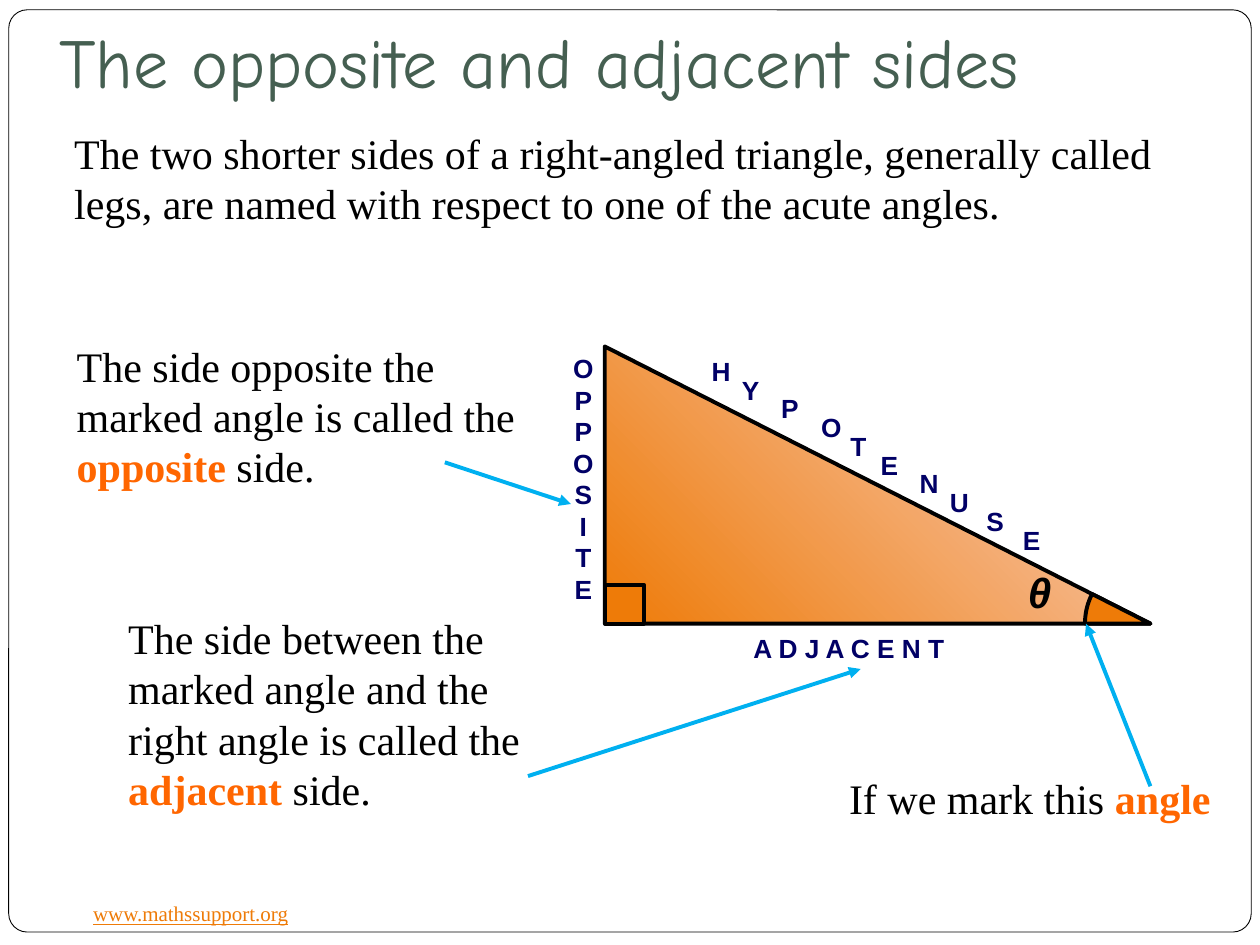
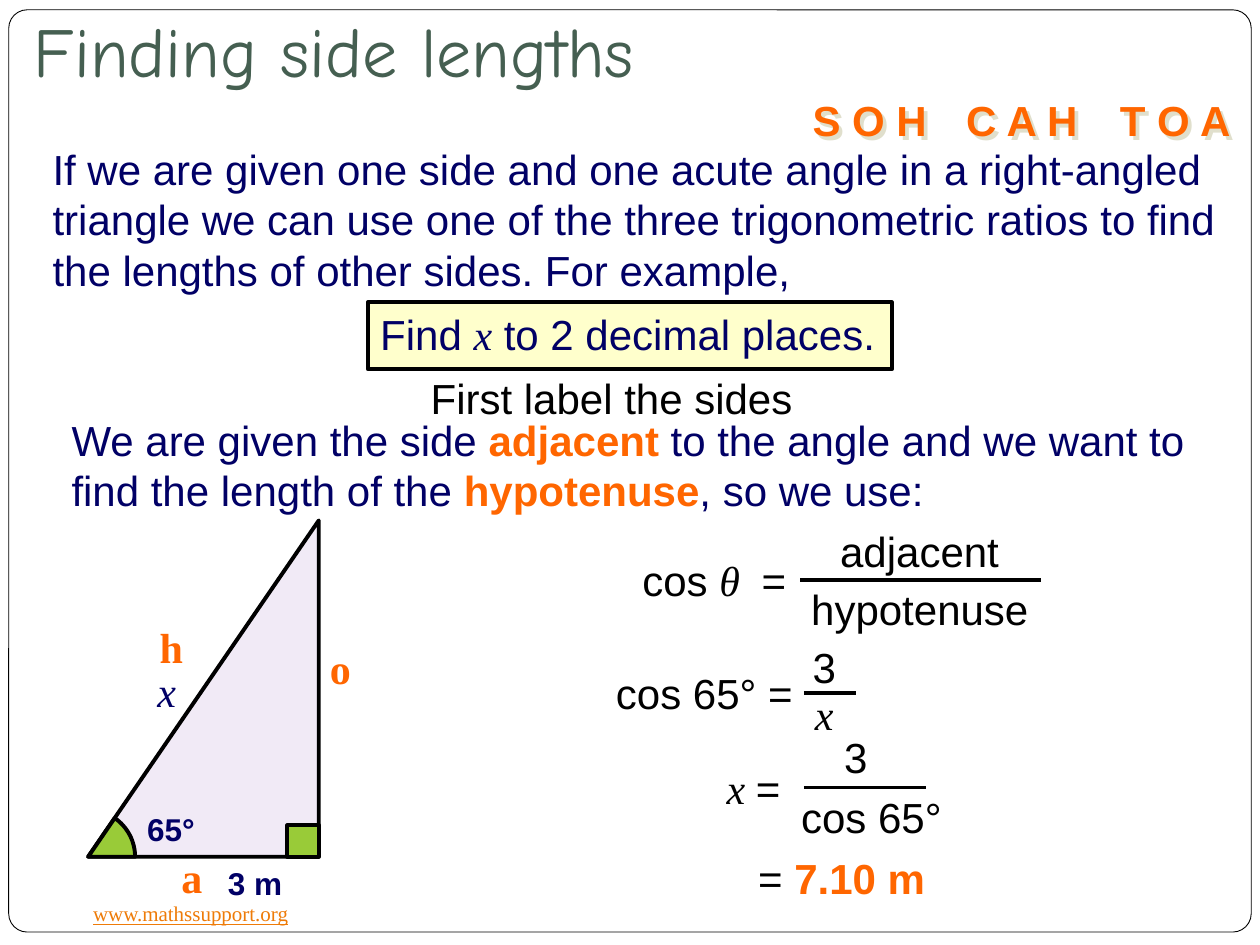
from math import atan2, cos, pi, sin

from lxml import etree
from pptx import Presentation
from pptx.dml.color import RGBColor
from pptx.enum.shapes import MSO_CONNECTOR, MSO_SHAPE
from pptx.enum.text import MSO_ANCHOR, MSO_AUTO_SIZE, PP_ALIGN
from pptx.oxml.ns import qn
from pptx.util import Pt

# Shared look
WHITE, BLACK, NAVY, ORANGE = "FFFFFF", "000000", "010066", "FF6600"
SKY, AMBER, GREEN, LILAC, CREAM = "00B0F0", "EE7B08", "99CB38", "F1EAF6", "FFFFCC"
LINE_WIDTH = 2.25
LINE_HEIGHT = 1.2
INSET_X, INSET_Y = 7.2, 3.6


def font(name, color, size=24, **more):
    return dict(name=name, color=color, size=size, **more)


SERIF, SANS = "Times New Roman", "Arial"
TITLE = font("Comic Neue", "455F51", 40)
LINK = font(SERIF, AMBER, 12, underline=True)
SERIF_TEXT = font(SERIF, BLACK)
SERIF_KEY = font(SERIF, ORANGE, bold=True)
SANS_TEXT = font(SANS, BLACK)
SANS_NAVY = font(SANS, NAVY)
SANS_KEY = font(SANS, ORANGE, bold=True)
VARIABLE = font(SERIF, BLACK, italic=True)
VARIABLE_NAVY = font(SERIF, NAVY, italic=True)
THETA = font(SANS, BLACK, bold=True, italic=True)
SIDE_NAME = font(SANS, NAVY, 15, bold=True)
MEASURE = font(SANS, NAVY, 18, bold=True)

# Slide 1 content: left, top, width, lines, runs
SIDES_TITLE = ("The opposite and adjacent sides", (26.6, 10.8, 674.6, 54.7))
SIDES_PARAGRAPHS = [
    (35.3, 69.1, 661, 2, [("The two shorter sides of a right-angled triangle, generally called "
                           "legs, are named with respect to one of the acute angles.", SERIF_TEXT)]),
    (36.7, 190.8, 265.7, 3, [("The side opposite the marked angle is called the ", SERIF_TEXT),
                             ("opposite", SERIF_KEY), (" side.", SERIF_TEXT)]),
    (66.2, 346.3, 257.8, 4, [("The side between the marked angle and the right angle is called the ",
                              SERIF_TEXT), ("adjacent", SERIF_KEY), (" side.", SERIF_TEXT)]),
    (478.1, 437.8, 241.9, 1, [("If we mark this ", SERIF_TEXT), ("angle", SERIF_KEY)]),
]
SIDES_TRIANGLE = (345.6, 198, 311.8, 158.4)
HYPOTENUSE_LEFTS = [399.6, 416.9, 439.2, 462.2, 478.8, 496.1, 518.4, 535.7, 556.6, 577.4]
HYPOTENUSE_TOP, HYPOTENUSE_STEP = 199.4, 10.72
SIDES_ARROWS = [
    (254.2, 264.2, 326.2, 288),
    (301.7, 443.5, 491.8, 382.3),
    (657.4, 449.3, 620.6, 356.4),
]

# Slide 2 content
LENGTHS_TITLE = ("Finding side lengths", (12.2, 11.5, 612, 48.2))
LENGTHS_PARAGRAPHS = [
    (23, 78.5, 679, 3, [("If we are given one side and one acute angle in a right-angled triangle "
                         "we can use one of the three trigonometric ratios to find the lengths "
                         "of other sides. For example,", SANS_NAVY)]),
    (239, 209.5, 246.2, 1, [("First label the sides", SANS_TEXT)]),
    (33.8, 233.3, 677.5, 2, [("We are given the side ", SANS_NAVY), ("adjacent", SANS_KEY),
                             (" to the angle and we want to find the length of the ", SANS_NAVY),
                             ("hypotenuse", SANS_KEY), (", so we use:", SANS_NAVY)]),
]
QUESTION = [("Find ", SANS_NAVY), ("x", VARIABLE_NAVY), (" to 2 decimal places.", SANS_NAVY)]
LENGTHS_TRIANGLE = (50.4, 297.4, 131.8, 192.2)
# left, top, width, runs
LENGTHS_LABELS = [
    (77, 459.4, 41.8, [("65°", MEASURE)]),
    (82.8, 376.6, 25.2, [("x", VARIABLE_NAVY)]),
    (123.1, 490.3, 46.1, [("3 m", MEASURE)]),
    (84.2, 351.4, 29.5, [("h", SERIF_KEY)]),
    (181.4, 363.6, 27.4, [("o", SERIF_KEY)]),
    (96.5, 483.1, 28.1, [("a", SERIF_KEY)]),
    (360, 313.2, 70.4, [("cos ", SANS_TEXT), ("θ", VARIABLE)]),
    (428.2, 313.2, 28.4, [("=", SANS_TEXT)]),
    (473, 296.6, 106.6, [("adjacent", SANS_TEXT)]),
    (456.5, 329.8, 139, [("hypotenuse", SANS_TEXT)]),
    (344.9, 378, 116.6, [("cos 65° =", SANS_TEXT)]),
    (457.2, 362.9, 28.1, [("3", SANS_TEXT)]),
    (458.6, 390.2, 25.2, [("x", VARIABLE)]),
    (408.2, 432, 45.4, [("x ", VARIABLE), ("=", SANS_TEXT)]),
    (475.2, 414.7, 28.1, [("3", SANS_TEXT)]),
    (450.7, 448.6, 95.8, [("cos 65°", SANS_TEXT)]),
    (426.2, 483.8, 110.9, [("=", SANS_TEXT), (" 7.10 m", SANS_KEY)]),
]
# left, right, height on the slide
FRACTION_BARS = [(457.2, 594.7, 331.2), (459.4, 488.9, 396), (459.4, 529.2, 450)]
MNEMONICS = ["S O H", "C A H", "T O A"]
MNEMONIC_LEFT, MNEMONIC_STEP = 457.2, 87.84


def rgb(value):
    return RGBColor.from_string(value)


def points(*values):
    return [Pt(value) for value in values]


def paint(shape, fill=None, line=None, width=LINE_WIDTH):
    shape.shadow.inherit = False
    if fill:
        shape.fill.solid()
        shape.fill.fore_color.rgb = rgb(fill)
    if line:
        shape.line.color.rgb = rgb(line)
        shape.line.width = Pt(width)
    else:
        shape.line.fill.background()


def write_runs(paragraph, runs):
    for text, style in runs:
        run = paragraph.add_run()
        run.text = text
        for key, value in style.items():
            if key == "color":
                run.font.color.rgb = rgb(value)
            else:
                setattr(run.font, key, Pt(value) if key == "size" else value)


def add_text(slide, left, top, width, paragraphs, lines=1, wrap=False, align=PP_ALIGN.LEFT):
    size = paragraphs[0][0][1]["size"]
    height = lines * size * LINE_HEIGHT + 2 * INSET_Y
    box = slide.shapes.add_textbox(*points(left, top, width, height))
    frame = box.text_frame
    frame.word_wrap = wrap
    frame.auto_size = MSO_AUTO_SIZE.SHAPE_TO_FIT_TEXT
    for index, runs in enumerate(paragraphs):
        paragraph = frame.add_paragraph() if index else frame.paragraphs[0]
        paragraph.alignment = align
        paragraph.line_spacing = Pt(size * LINE_HEIGHT)
        write_runs(paragraph, runs)
    return box


def add_paragraphs(slide, items):
    for left, top, width, lines, runs in items:
        add_text(slide, left, top, width, [runs], lines, wrap=True)


def add_figure(slide, kind, box, fill, line=BLACK, width=LINE_WIDTH):
    shape = slide.shapes.add_shape(kind, *points(*box))
    paint(shape, fill, line, width)
    return shape


def add_line(slide, ends, color, arrow=False):
    line = slide.shapes.add_connector(MSO_CONNECTOR.STRAIGHT, *points(*ends))
    line.line.color.rgb = rgb(color)
    line.line.width = Pt(LINE_WIDTH)
    if arrow:
        etree.SubElement(line.line._get_or_add_ln(), qn("a:tailEnd"), type="triangle")
    etree.SubElement(line.element.spPr, qn("a:effectLst"))


def add_sector(slide, vertex, radius, start, end, fill, steps=16):
    """Draw an angle mark; the angles are radians, anticlockwise from the right."""
    angles = [start + (end - start) * step / steps for step in range(steps + 1)]
    arc = [(Pt(vertex[0] + radius * cos(a)), Pt(vertex[1] - radius * sin(a))) for a in angles]
    builder = slide.shapes.build_freeform(*points(*vertex))
    builder.add_line_segments(arc, close=True)
    paint(builder.convert_to_shape(), fill, BLACK)


def add_text_shadow(box):
    effects = etree.SubElement(box.element.spPr, qn("a:effectLst"))
    shadow = etree.SubElement(effects, qn("a:outerShdw"), dist=str(Pt(3)), dir="2700000",
                              algn="ctr", rotWithShape="0")
    etree.SubElement(shadow, qn("a:srgbClr"), val="E0DFCC")


def new_slide(presentation, title, box):
    slide = presentation.slides.add_slide(presentation.slide_layouts[5])
    placeholder = slide.shapes.title
    # Border behind the title, then the footer
    border = add_figure(slide, MSO_SHAPE.ROUNDED_RECTANGLE, (5, 5.6, 710, 527), WHITE, BLACK, 0.5)
    border.adjustments[0] = 0.02
    placeholder.element.addprevious(border.element)
    add_text(slide, 46.1, 511.2, 127.4, [[("www.mathssupport.org", LINK)]])
    for key, value in zip(("left", "top", "width", "height"), points(*box)):
        setattr(placeholder, key, value)
    frame = placeholder.text_frame
    settings = dict(margin_left=Pt(INSET_X), margin_top=Pt(INSET_Y), margin_right=Pt(INSET_X),
                    margin_bottom=Pt(7.2), vertical_anchor=MSO_ANCHOR.BOTTOM,
                    word_wrap=True, auto_size=MSO_AUTO_SIZE.NONE)
    for key, value in settings.items():
        setattr(frame, key, value)
    frame.paragraphs[0].alignment = PP_ALIGN.LEFT
    write_runs(frame.paragraphs[0], [(title, TITLE)])
    return slide


def build_sides(presentation):
    slide = new_slide(presentation, *SIDES_TITLE)
    add_paragraphs(slide, SIDES_PARAGRAPHS)

    # Triangle with its two marked angles
    left, top, width, height = SIDES_TRIANGLE
    bottom = top + height
    triangle = add_figure(slide, MSO_SHAPE.RIGHT_TRIANGLE, SIDES_TRIANGLE, None)
    triangle.fill.gradient()
    triangle.fill.gradient_angle = 45
    for stop, color, position in zip(triangle.fill.gradient_stops, (AMBER, "F8D2C6"), (0, 1)):
        stop.color.rgb = rgb(color)
        stop.position = position
    corner = 22.3
    add_figure(slide, MSO_SHAPE.RECTANGLE, (left, bottom - corner, corner, corner), AMBER)
    add_sector(slide, (left + width, bottom), 37.4, pi - atan2(height, width), pi, AMBER)

    # Names of the sides and the angle
    add_text(slide, 580.3, 320.4, 27.4, [[("θ", THETA)]])
    for index, (letter, letter_left) in enumerate(zip("HYPOTENUSE", HYPOTENUSE_LEFTS)):
        letter_top = HYPOTENUSE_TOP + index * HYPOTENUSE_STEP
        add_text(slide, letter_left, letter_top, 24.8, [[(letter, SIDE_NAME)]])
    opposite = [[(letter, SIDE_NAME)] for letter in "OPPOSITE"]
    add_text(slide, 320.4, 198, 25.9, opposite, len(opposite), align=PP_ALIGN.CENTER)
    add_text(slide, 423.4, 357.8, 125.3, [[("A D J A C E N T", SIDE_NAME)]])
    for ends in SIDES_ARROWS:
        add_line(slide, ends, SKY, arrow=True)


def build_lengths(presentation):
    slide = new_slide(presentation, *LENGTHS_TITLE)

    # Mnemonic, explanation and question
    for index, word in enumerate(MNEMONICS):
        left = MNEMONIC_LEFT + index * MNEMONIC_STEP
        add_text_shadow(add_text(slide, left, 50.4, 79.9, [[(word, SANS_KEY)]]))
    add_paragraphs(slide, LENGTHS_PARAGRAPHS)
    question = add_text(slide, 210.2, 172.8, 299.5, [QUESTION])
    question.height = Pt(38.2)
    paint(question, CREAM, BLACK)

    # Triangle with its two marked angles
    left, top, width, height = LENGTHS_TRIANGLE
    bottom = top + height
    triangle = add_figure(slide, MSO_SHAPE.RIGHT_TRIANGLE, LENGTHS_TRIANGLE, LILAC)
    triangle.element.spPr.xfrm.set("flipH", "1")
    add_sector(slide, (left, bottom), 26.8, 0, atan2(height, width), GREEN)
    corner = 18
    add_figure(slide, MSO_SHAPE.RECTANGLE,
               (left + width - corner, bottom - corner, corner, corner), GREEN)

    # Labels and worked solution
    for label_left, label_top, label_width, runs in LENGTHS_LABELS:
        add_text(slide, label_left, label_top, label_width, [runs])
    for bar_left, bar_right, bar_top in FRACTION_BARS:
        add_line(slide, (bar_left, bar_top, bar_right, bar_top), BLACK)


def main():
    presentation = Presentation()
    presentation.slide_width, presentation.slide_height = points(720, 540)
    build_sides(presentation)
    build_lengths(presentation)
    presentation.save("out.pptx")


if __name__ == "__main__":
    main()
